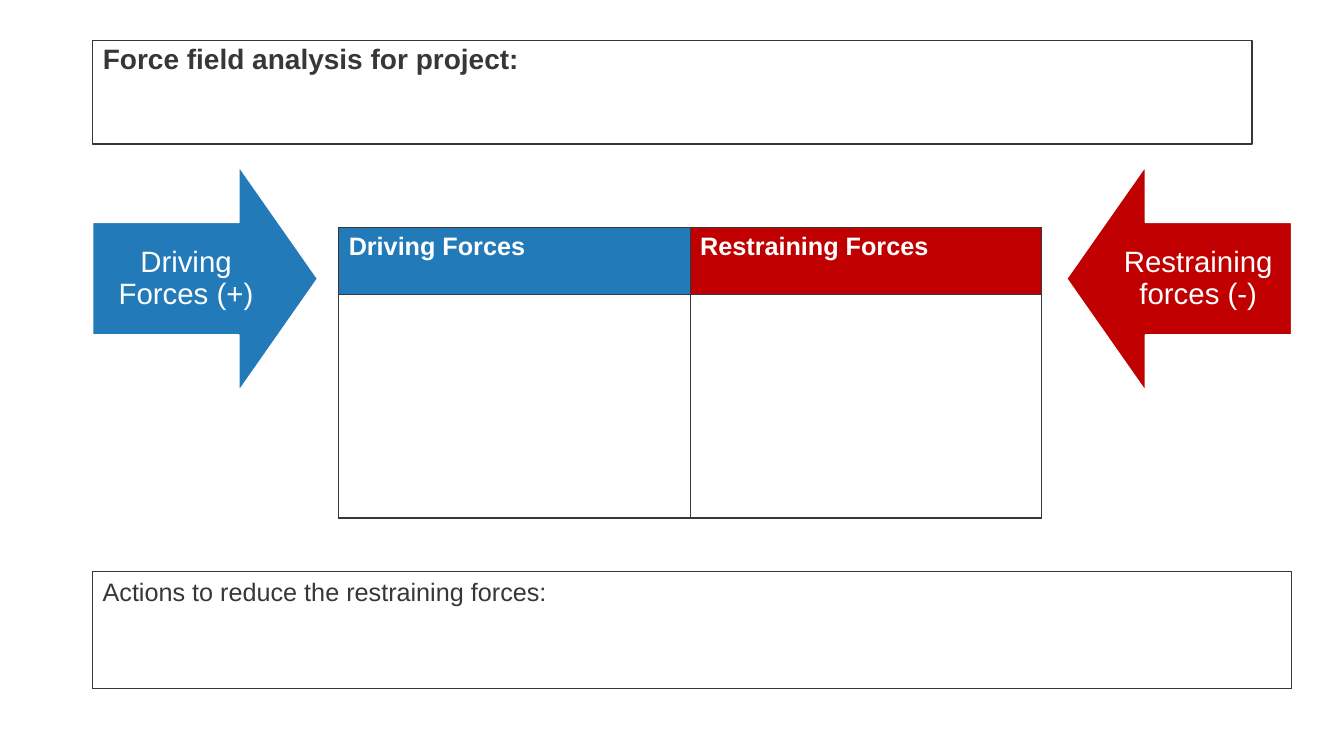
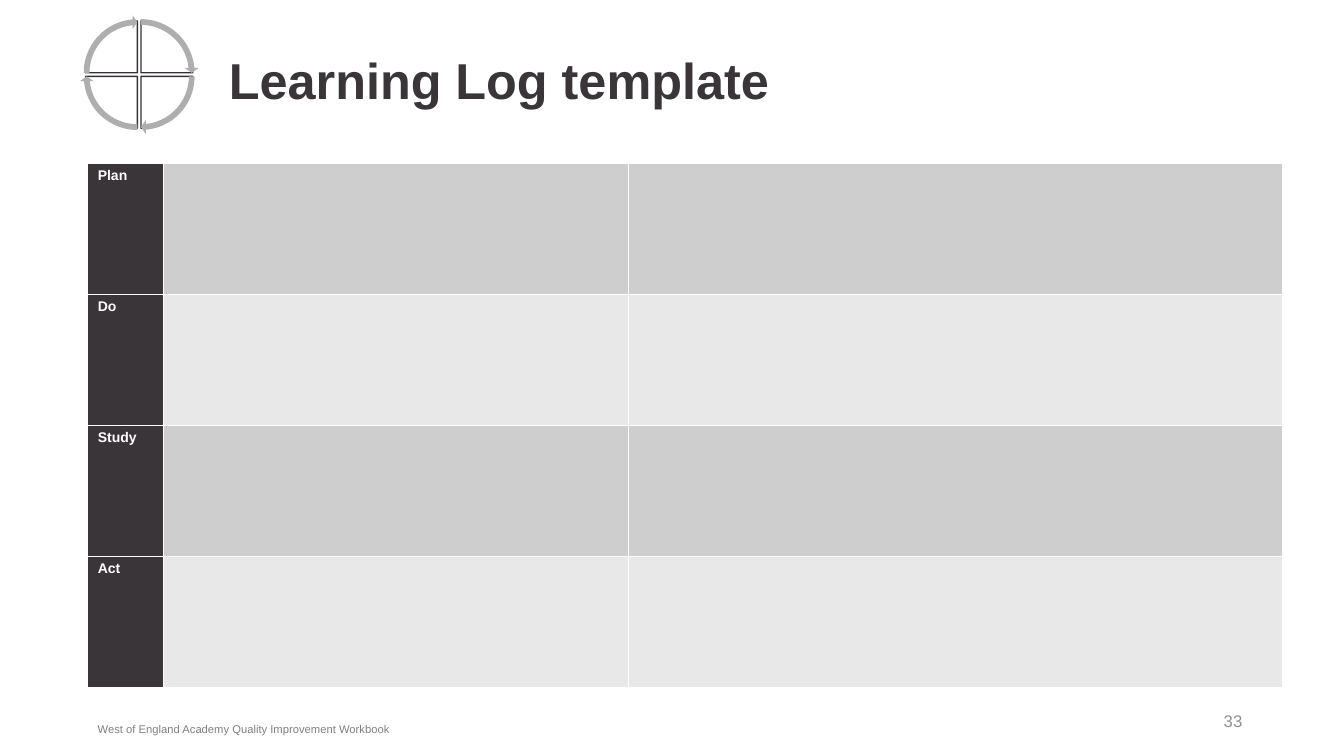
from dataclasses import dataclass
from typing import NamedTuple

from lxml import etree
from pptx import Presentation
from pptx.dml.color import RGBColor
from pptx.enum.shapes import MSO_SHAPE as SHAPE
from pptx.enum.text import MSO_ANCHOR as ANCHOR, MSO_AUTO_SIZE as AUTO, PP_ALIGN as ALIGN
from pptx.oxml.ns import qn
from pptx.util import Emu, Inches, Pt


@dataclass(frozen=True)
class Theme:
    font: str = "Arial"
    ink: str = "393539"
    white: str = "FFFFFF"
    driving: str = "227AB9"
    restraining: str = "C00000"
    band_dark: str = "CECECE"
    band_light: str = "E8E8E8"
    cycle_line: str = "343034"
    cycle_arrow: str = "AFAEAF"
    footer: str = "808080"
    number: str = "919091"
    title_size: float = 36
    arrow_size: float = 21
    heading_size: float = 20
    body_size: float = 18
    number_size: float = 12
    row_size: float = 10
    footer_size: float = 8
    line: float = 1


T = Theme()
SLIDE_W, SLIDE_H = Inches(13.33), Inches(7.5)


class Box(NamedTuple):
    x: int
    y: int
    w: int
    h: int

    def inner(self, x, y, w, h):
        """Box inside this one, given as shares of its width and height."""
        return Box(Emu(int(self.x + x * self.w)), Emu(int(self.y + y * self.h)),
                   Emu(int(w * self.w)), Emu(int(h * self.h)))


def area(x, y, w, h):
    """Box given as percentages of the slide."""
    return Box(0, 0, SLIDE_W, SLIDE_H).inner(x / 100, y / 100, w / 100, h / 100)


def rgb(value):
    return RGBColor.from_string(value)


def write(tf, text, size, color=T.ink, bold=False, align=ALIGN.LEFT,
          anchor=ANCHOR.TOP, spacing=None, inset=None):
    tf.word_wrap = True
    tf.vertical_anchor = anchor
    if inset is not None:
        tf.margin_left = tf.margin_right = tf.margin_top = tf.margin_bottom = Inches(inset)
    p = tf.paragraphs[0]
    p.alignment = align
    if spacing:
        p.line_spacing = spacing
    r = p.add_run()
    r.text = text
    font = r.font
    font.name, font.size, font.bold = T.font, Pt(size), bold
    font.color.rgb = rgb(color)


def paint(sp, fill, line=None):
    sp.fill.solid()
    sp.fill.fore_color.rgb = rgb(fill)
    if line:
        sp.line.color.rgb = rgb(line)
        sp.line.width = Pt(T.line)
    else:
        sp.line.fill.background()


def add_shape(shapes, kind, box, fill, line=None, adjust=()):
    sp = shapes.add_shape(kind, *box)
    sp.shadow.inherit = False
    paint(sp, fill, line)
    for i, value in enumerate(adjust):
        sp.adjustments[i] = value
    return sp


def add_text(slide, box, text, size, **style):
    write(slide.shapes.add_textbox(*box).text_frame, text, size, **style)


def set_title(slide, box, text, size, anchor):
    sp = slide.shapes.title
    sp.left, sp.top, sp.width, sp.height = box
    sp.text_frame.auto_size = AUTO.NONE
    write(sp.text_frame, text, size, bold=True, anchor=anchor, spacing=0.9)
    return sp


def set_borders(cell, color):
    tc_pr = cell._tc.get_or_add_tcPr()
    for i, side in enumerate(("lnL", "lnR", "lnT", "lnB")):
        ln = etree.Element(qn(f"a:{side}"), w=str(Pt(T.line)))
        fill = etree.SubElement(ln, qn("a:solidFill"))
        etree.SubElement(fill, qn("a:srgbClr"), val=color)
        tc_pr.insert(i, ln)


def add_grid(slide, box, cols, rows, texts, fills, border, size):
    """Table whose column and row sizes are shared out by weight."""
    table = slide.shapes.add_table(len(rows), len(cols), *box).table
    table.first_row = table.horz_banding = False
    for col, weight in zip(table.columns, cols):
        col.width = Emu(int(box.w * weight / sum(cols)))
    for row, weight in zip(table.rows, rows):
        row.height = Emu(int(box.h * weight / sum(rows)))
    for i, row in enumerate(table.rows):
        for j, cell in enumerate(row.cells):
            if fills[i][j]:
                cell.fill.solid()
                cell.fill.fore_color.rgb = rgb(fills[i][j])
            else:
                cell.fill.background()
            set_borders(cell, border)
            if texts[i][j]:
                write(cell.text_frame, texts[i][j], size, color=T.white, bold=True)


def force_arrow(slide, box, text, color, rotation, label_x):
    sp = add_shape(slide.shapes, SHAPE.DOWN_ARROW, box, color, T.white, (0.5, 0.35))
    sp.rotation = rotation
    add_text(slide, box.inner(label_x, 0.25, 0.83, 0.5), text, T.arrow_size, color=T.white,
             align=ALIGN.CENTER, anchor=ANCHOR.MIDDLE, spacing=0.9, inset=0.16)


def cycle_icon(slide, box):
    """Four quarter pies with an arrow running round each."""
    group = slide.shapes.add_group_shape()
    gap, turn = 0.03, 0.6  # turn: adjustment units in one degree
    quarters = ((1, 0, 270), (1, 1, 0), (0, 1, 90), (0, 0, 180))
    for right, low, start in quarters:
        pie = box.inner(0.05 + right * gap, 0.05 + low * gap, 0.87, 0.87)
        add_shape(group.shapes, SHAPE.PIE, pie, T.white, T.cycle_line,
                  (start * turn, (start + 90) % 360 * turn))
    for right, low, start in quarters:
        ring = box.inner(right * gap, low * gap, 1 - gap, 1 - gap)
        add_shape(group.shapes, SHAPE.CIRCULAR_ARROW, ring, T.cycle_arrow, None,
                  (0.05, 3.28, start * turn + 50.73, start * turn, 0.06))


def footer(slide, box, text, number):
    add_text(slide, box.inner(0, 0, 0.72, 1), text, T.footer_size,
             color=T.footer, anchor=ANCHOR.BOTTOM)
    add_text(slide, box.inner(0.74, 0, 0.26, 1), number, T.number_size,
             color=T.number, align=ALIGN.RIGHT, anchor=ANCHOR.MIDDLE)


def force_field_slide(slide):
    force_arrow(slide, area(6.9, 22, 16.73, 29.73), "Driving Forces (+)", T.driving, 270, 0)
    force_arrow(slide, area(79.37, 22, 16.73, 29.73), "Restraining forces (-)",
                T.restraining, 90, 0.17)
    title = set_title(slide, area(6.9, 5.33, 86.27, 13.73),
                      "Force field analysis for project:", T.heading_size, ANCHOR.TOP)
    paint(title, T.white, T.ink)
    add_grid(slide, area(25.2, 30.13, 52.3, 38.4), cols=(1, 1), rows=(0.66, 2.22),
             texts=(("Driving Forces", "Restraining Forces"), ("", "")),
             fills=((T.driving, T.restraining), (None, None)),
             border=T.ink, size=T.body_size)
    actions = add_shape(slide.shapes, SHAPE.RECTANGLE, area(6.9, 75.6, 89.2, 15.47),
                        T.white, T.ink)
    write(actions.text_frame, "Actions to reduce the restraining forces:", T.body_size)


def learning_log_slide(slide):
    steps = ("Plan", "Do", "Study", "Act")
    bands = (T.band_dark, T.band_light) * 2
    add_grid(slide, area(6.53, 21.6, 88.9, 69.33), cols=(0.75, 4.61, 6.49), rows=(1,) * 4,
             texts=[(step, "", "") for step in steps],
             fills=[(T.ink, band, band) for band in bands],
             border=T.white, size=T.row_size)
    set_title(slide, area(16.28, 1.33, 71.7, 19.33), "Learning Log template",
              T.title_size, ANCHOR.MIDDLE)
    cycle_icon(slide, area(5.93, 2, 8.85, 15.73))
    footer(slide, area(6.53, 92.67, 86.65, 5.33),
           "West of England Academy Quality Improvement Workbook", "33")


def main():
    prs = Presentation()
    prs.slide_width, prs.slide_height = SLIDE_W, SLIDE_H
    title_only = prs.slide_layouts[5]
    for build in (force_field_slide, learning_log_slide):
        build(prs.slides.add_slide(title_only))
    prs.save("out.pptx")


if __name__ == "__main__":
    main()
